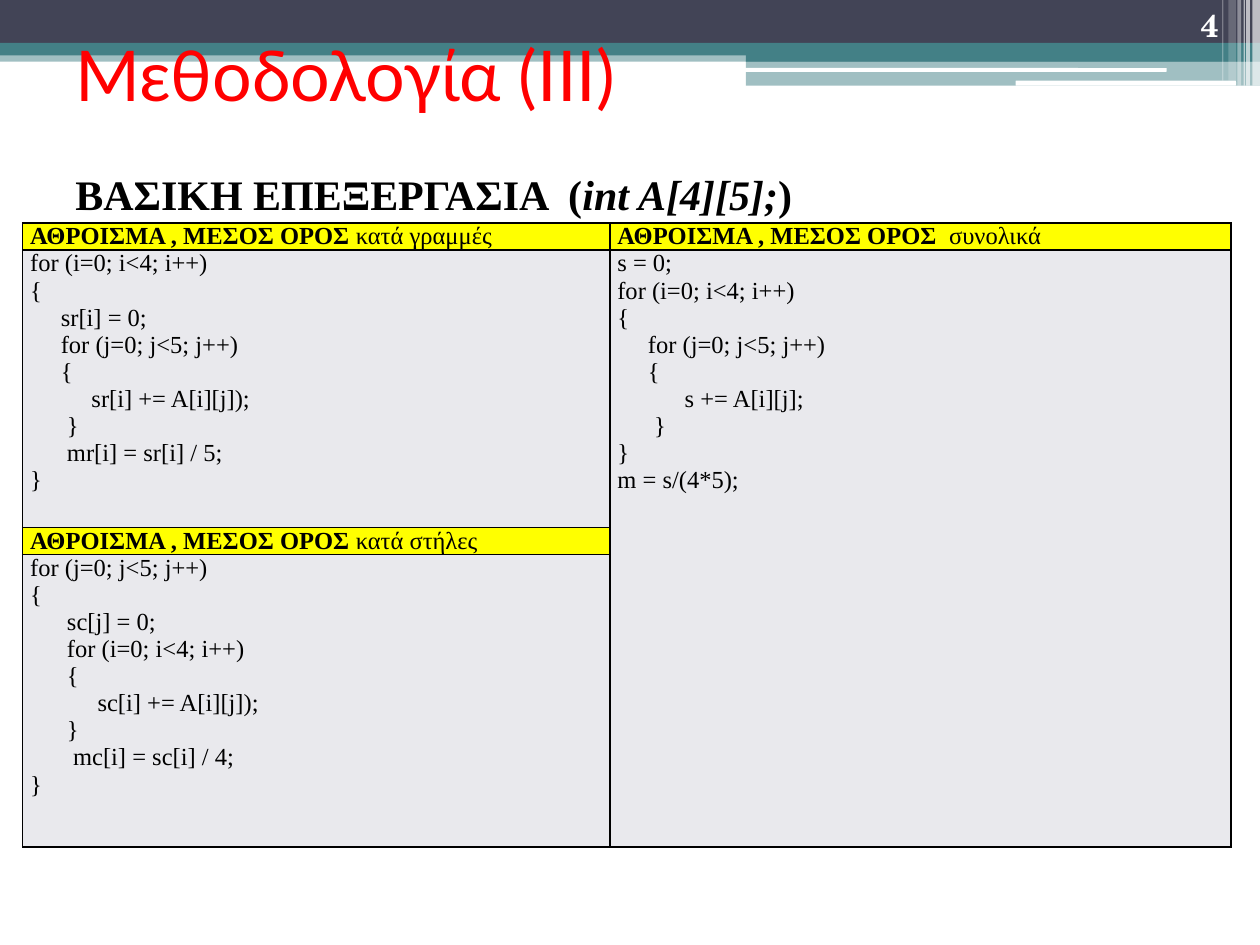
from lxml import etree
from pptx import Presentation
from pptx.dml.color import RGBColor
from pptx.enum import shapes, text
from pptx.oxml.ns import qn
from pptx.util import Inches, Pt

THEME = {
    "dark": "424456", "teal": "438086", "white": "FFFFFF", "black": "000000",
    "title": "FF0000", "header": "FFFF00", "code": "E9E9ED",
    "title_size": 40, "subtitle_size": 24, "number_size": 18, "table_size": 14,
    "title_font": "Lato", "number_font": "TeX Gyre Schola", "body_font": "Times New Roman",
}
SPACE_WIDTH = Pt(3.5)  # one space of the table font


def add_runs(paragraph, runs, font, size, color):
    """Add (text, bold, italic) runs in one font."""
    for content, bold, italic in runs:
        run = paragraph.add_run()
        run.text = content
        run.font.name = THEME[font]
        run.font.size = Pt(THEME[size])
        run.font.bold, run.font.italic = bold, italic
        run.font.color.rgb = RGBColor.from_string(THEME[color])


presentation = Presentation()
presentation.slide_width = Inches(10)
presentation.slide_height = Inches(7.5)
slide = presentation.slides.add_slide(presentation.slide_layouts[6])

# Header bands: left, top, width, height, colour, opacity in percent, rounded
bands = [
    (0, 0.4, 10, 0.09, "teal", 50, False),
    (0, 0, 10, 0.34, "dark", 100, False),
    (0, 0.34, 10, 0.1, "teal", 100, False),
    (5.92, 0.39, 4.08, 0.1, "teal", 100, False),
    (5.92, 0.48, 4.08, 0.2, "teal", 50, False),
    (5.91, 0.54, 3.35, 0.03, "white", 100, True),
    (8.06, 0.64, 1.75, 0.04, "white", 100, True),
]
# Thin upright stripes at the right edge: left, width, height, opacity
stripes = [
    (9.94, 0.06, 0.68, 65), (9.89, 0.03, 0.68, 65), (9.87, 0.01, 0.68, 60),
    (9.82, 0.03, 0.68, 40), (9.75, 0.06, 0.64, 20), (9.7, 0.01, 0.64, 30),
]
bands += [(left, 0, width, height, "white", opacity, False)
          for left, width, height, opacity in stripes]

for left, top, width, height, color, opacity, rounded in bands:
    kind = shapes.MSO_SHAPE.ROUNDED_RECTANGLE if rounded else shapes.MSO_SHAPE.RECTANGLE
    shape = slide.shapes.add_shape(kind, Inches(left), Inches(top), Inches(width), Inches(height))
    shape.shadow.inherit = False
    shape.line.fill.background()
    shape.fill.solid()
    shape.fill.fore_color.rgb = RGBColor.from_string(THEME[color])
    if opacity < 100:
        color_element = shape.fill._xPr.find(".//" + qn("a:srgbClr"))
        etree.SubElement(color_element, qn("a:alpha")).set("val", str(opacity * 1000))

# Table of code samples; leading spaces become paragraph indents
headers = {
    (0, 0): ("ΑΘΡΟΙΣΜΑ , ΜΕΣΟΣ ΟΡΟΣ ", "κατά γραμμές"),
    (0, 1): ("ΑΘΡΟΙΣΜΑ , ΜΕΣΟΣ ΟΡΟΣ  ", "συνολικά"),
    (2, 0): ("ΑΘΡΟΙΣΜΑ , ΜΕΣΟΣ ΟΡΟΣ ", "κατά στήλες"),
}
code = {
    (1, 0): """for (i=0; i<4; i++)
{
     sr[i] = 0;
     for (j=0; j<5; j++)
     {
          sr[i] += A[i][j]);
      }
      mr[i] = sr[i] / 5;
}""",
    (1, 1): """s = 0;
for (i=0; i<4; i++)
{
     for (j=0; j<5; j++)
     {
           s += A[i][j];
      }
}
m = s/(4*5);""",
    (3, 0): """for (j=0; j<5; j++)
{
      sc[j] = 0;
      for (i=0; i<4; i++)
      {
           sc[i] += A[i][j]);
      }
       mc[i] = sc[i] / 4;
}""",
}
column_widths = [4.66, 4.93]
row_heights = [0.21, 2.2, 0.21, 2.32]
table = slide.shapes.add_table(
    len(row_heights), len(column_widths), Inches(0.18), Inches(1.77),
    Inches(sum(column_widths)), Inches(sum(row_heights))).table
for column, width in zip(table.columns, column_widths):
    column.width = Inches(width)
for row, height in zip(table.rows, row_heights):
    row.height = Inches(height)
table.cell(1, 1).merge(table.cell(3, 1))

for row in range(len(row_heights)):
    for column in range(len(column_widths)):
        cell = table.cell(row, column)
        cell.margin_left = cell.margin_right = Inches(0.06)
        cell.margin_top = cell.margin_bottom = 0
        properties = cell._tc.get_or_add_tcPr()
        for side in ("lnL", "lnR", "lnT", "lnB"):
            border = etree.SubElement(properties, qn("a:" + side), w=str(Pt(1)))
            fill = etree.SubElement(border, qn("a:solidFill"))
            etree.SubElement(fill, qn("a:srgbClr"), val=THEME["black"])
        cell.fill.solid()
        is_header = (row, column) in headers
        cell.fill.fore_color.rgb = RGBColor.from_string(THEME["header" if is_header else "code"])

        if is_header:
            label, scope = headers[row, column]
            add_runs(cell.text_frame.paragraphs[0], [(label, True, False), (scope, False, False)],
                     "body_font", "table_size", "black")
        elif (row, column) in code:
            for index, line in enumerate(code[row, column].splitlines()):
                frame = cell.text_frame
                paragraph = frame.add_paragraph() if index else frame.paragraphs[0]
                statement = line.lstrip()
                indent = (len(line) - len(statement)) * SPACE_WIDTH
                paragraph._p.get_or_add_pPr().set("marL", str(indent))
                add_runs(paragraph, [(statement, False, False)],
                         "body_font", "table_size", "black")

# Title, slide number and subtitle
middle, bottom = text.MSO_ANCHOR.MIDDLE, text.MSO_ANCHOR.BOTTOM
left_aligned, right_aligned = text.PP_ALIGN.LEFT, text.PP_ALIGN.RIGHT
labels = [
    ((0.5, 0, 9, 1.17), middle, left_aligned, True, (0.05, 0.05),
     [("Μεθοδολογία (ΙII)", False, False)], "title_font", "title_size", "title"),
    ((8.94, 0, 0.83, 0.4), bottom, right_aligned, True, (0.05, 0.05),
     [("4", True, False)], "number_font", "number_size", "white"),
    ((0.5, 1.17, 6.04, 0.61), middle, left_aligned, False, (0.17, 0.04),
     [("ΒΑΣΙΚΗ ΕΠΕΞΕΡΓΑΣΙΑ  (", True, False), ("int A[4][5];", True, True), (")", True, False)],
     "body_font", "subtitle_size", "black"),
]
for box, anchor, alignment, wrap, margins, runs, font, size, color in labels:
    frame = slide.shapes.add_textbox(*(Inches(value) for value in box)).text_frame
    frame.word_wrap = wrap
    frame.vertical_anchor = anchor
    frame.margin_top, frame.margin_bottom = (Inches(value) for value in margins)
    frame.paragraphs[0].alignment = alignment
    add_runs(frame.paragraphs[0], runs, font, size, color)

presentation.save("out.pptx")
